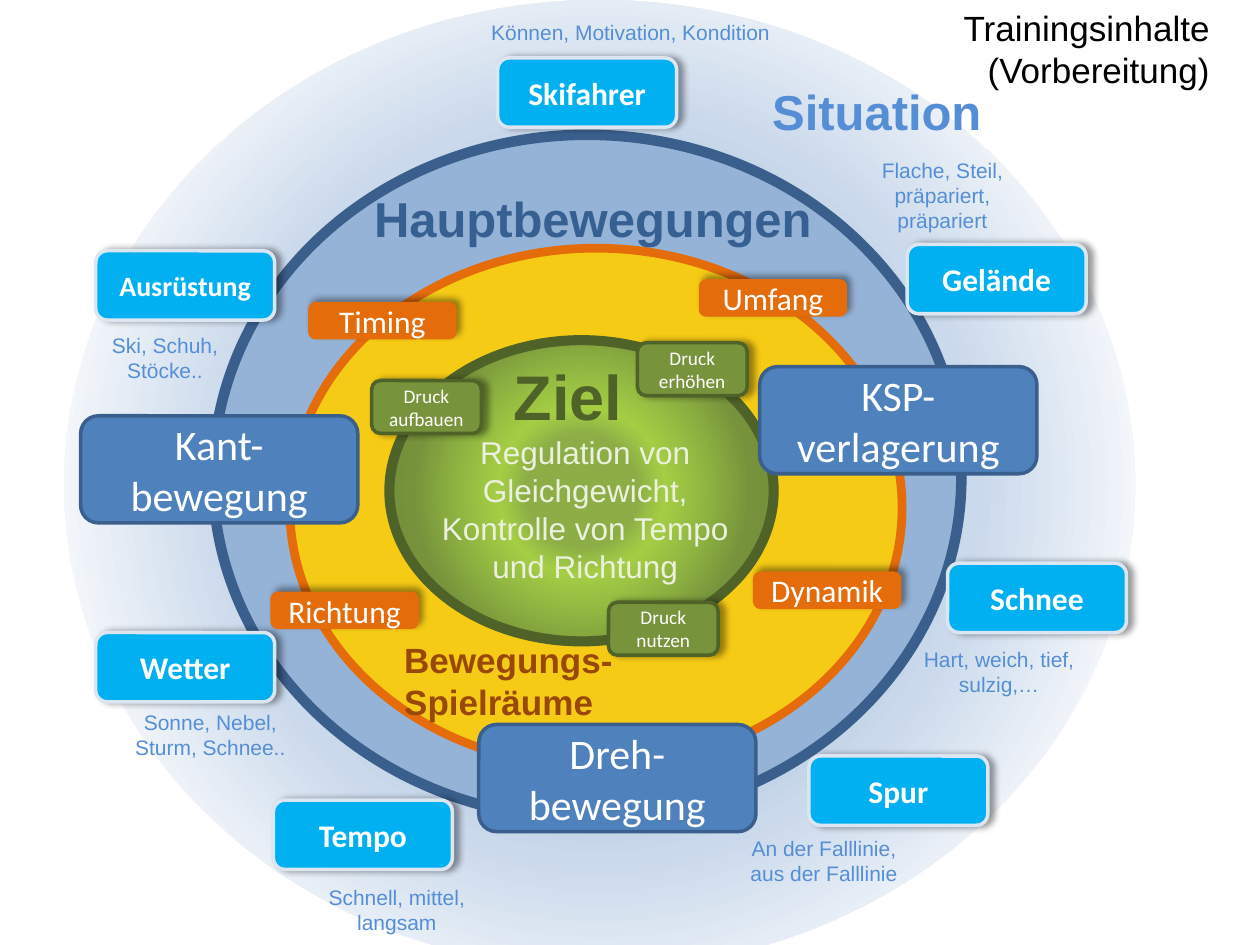
from lxml import etree
from pptx import Presentation
from pptx.dml.color import RGBColor
from pptx.enum.shapes import MSO_SHAPE
from pptx.enum.text import MSO_ANCHOR, MSO_AUTO_SIZE, PP_ALIGN
from pptx.oxml.ns import qn
from pptx.util import Inches, Pt

ELLIPSE = MSO_SHAPE.OVAL
ROUNDED = MSO_SHAPE.ROUNDED_RECTANGLE
LEFT, CENTER, RIGHT = PP_ALIGN.LEFT, PP_ALIGN.CENTER, PP_ALIGN.RIGHT
MIDDLE = MSO_ANCHOR.MIDDLE
GROW = MSO_AUTO_SIZE.SHAPE_TO_FIT_TEXT

WHITE = "FFFFFF"
SKY = "558ED5"
NAVY = "3A5F8C"
ORANGE = "E46C0A"
OLIVE = "4F6228"


def rgb(hex_color):
    return RGBColor.from_string(hex_color)


def child(parent, tag, **attributes):
    """Append a DrawingML element with the given attributes."""
    element = etree.SubElement(parent, qn(tag))
    for name, value in attributes.items():
        element.set(name, str(value))
    return element


class Diagram:
    """The current slide and the style of its elements."""

    def __init__(self, slide):
        self.slide = slide
        self.shapes = slide.shapes

    def start_group(self):
        self.shapes = self.slide.shapes.add_group_shape().shapes

    def end_group(self):
        self.shapes = self.slide.shapes

    def set_lines(self, frame, lines, size, color, font, bold=False, align=CENTER):
        for number, line in enumerate(lines):
            paragraph = frame.paragraphs[0] if number == 0 else frame.add_paragraph()
            paragraph.text = line
            paragraph.alignment = align
            paragraph.font.size = Pt(size)
            paragraph.font.name = font
            paragraph.font.bold = bold
            paragraph.font.color.rgb = rgb(color)

    def shape(self, kind, box, fill, line=None, width=2):
        shape = self.shapes.add_shape(kind, *map(Inches, box))
        shape.shadow.inherit = False
        if isinstance(fill, str):
            shape.fill.solid()
            shape.fill.fore_color.rgb = rgb(fill)
        else:
            self.radial_fill(shape, fill)
        if line:
            shape.line.color.rgb = rgb(line)
            shape.line.width = Pt(width)
        else:
            shape.line.fill.background()
        return shape

    def radial_fill(self, shape, stops):
        """Fill from the centre outwards with (percent, colour, opacity) stops."""
        properties = shape._element.spPr
        gradient = child(properties, "a:gradFill", rotWithShape=1)
        stop_list = child(gradient, "a:gsLst")
        for position, color, opacity in stops:
            stop = child(stop_list, "a:gs", pos=position * 1000)
            tint = child(stop, "a:srgbClr", val=color)
            if opacity < 100:
                child(tint, "a:alpha", val=opacity * 1000)
        circle = child(gradient, "a:path", path="circle")
        child(circle, "a:fillToRect", l=50000, t=50000, r=50000, b=50000)
        properties.find(qn("a:prstGeom")).addnext(gradient)

    def cast_shadow(self, shape, angle):
        effects = shape._element.spPr.find(qn("a:effectLst"))
        shadow = child(effects, "a:outerShdw", blurRad=Pt(4), dist=Pt(3),
                       dir=angle * 60000, algn="l", rotWithShape=0)
        child(child(shadow, "a:srgbClr", val="000000"), "a:alpha", val=40000)

    def label(self, box, lines, fill, line, size, bold=False, shadow_angle=None):
        """A rounded rectangle with centred white text."""
        shape = self.shape(ROUNDED, box, fill, line)
        if shadow_angle is not None:
            self.cast_shadow(shape, shadow_angle)
        shape.text_frame.word_wrap = True
        shape.text_frame.vertical_anchor = MIDDLE
        self.set_lines(shape.text_frame, lines, size, WHITE, "Calibri", bold)

    def text(self, box, lines, size, color, bold=False, align=LEFT, wrap=False):
        frame = self.shapes.add_textbox(*map(Inches, box)).text_frame
        frame.word_wrap = wrap
        frame.auto_size = GROW
        self.set_lines(frame, lines, size, color, "Arial", bold, align)


FACTORS = [
    (3.95, 0.46, "Skifahrer", 18),
    (7.2, 1.94, "Gelände", 18),
    (7.52, 4.47, "Schnee", 18),
    (6.42, 6, "Spur", 18),
    (2.17, 6.35, "Tempo", 18),
    (0.76, 5.02, "Wetter", 18),
    (0.76, 1.99, "Ausrüstung", 16),
]
FACTOR_NOTES = [
    (6.73, 1.2, 0.71, ["Flache, Steil, präpariert,", "präpariert"]),
    (7.18, 5.08, 0.5, ["Hart, weich, tief, sulzig,…"]),
    (5.79, 6.58, 0.5, ["An der Falllinie,", "aus der Falllinie"]),
    (2.4, 6.97, 0.5, ["Schnell, mittel, langsam"]),
    (0.92, 5.58, 0.5, ["Sonne, Nebel, Sturm, Schnee.."]),
    (0.56, 2.59, 0.5, ["Ski, Schuh, Stöcke.."]),
]
MOVEMENTS = [
    (6.03, 2.91, ["KSP-", "verlagerung"]),
    (3.8, 5.75, ["Dreh- bewegung"]),
    (0.64, 3.3, ["Kant- bewegung"]),
]
MARGINS = [
    (2.46, 2.41, "Timing"),
    (2.16, 4.71, "Richtung"),
    (5.56, 2.23, "Umfang"),
    (5.99, 4.55, "Dynamik"),
]
PRESSURES = [
    (2.95, 3.02, "Druck aufbauen"),
    (5.06, 2.72, "Druck erhöhen"),
    (4.83, 4.78, "Druck nutzen"),
]
SITUATION_GLOW = [(16, "B0C6E1", 100), (36, "B0C6E1", 100),
                  (52, "CAD9EB", 100), (81, WHITE, 100)]
GOAL_GLOW = [(23, "8DAE47", 100), (34, "92D050", 80),
             (69, "77933C", 100), (97, "6F8938", 100)]


def main():
    presentation = Presentation()
    presentation.slide_width = Inches(10)
    presentation.slide_height = Inches(7.5)
    diagram = Diagram(presentation.slides.add_slide(presentation.slide_layouts[6]))

    diagram.shape(ELLIPSE, (0.51, 0, 8.5, 7.69), SITUATION_GLOW)
    diagram.shape(ELLIPSE, (1.69, 1.07, 5.94, 5.43), "95B3D7", NAVY, 6)

    diagram.start_group()
    for left, top, factor, size in FACTORS:
        diagram.label((left, top, 1.42, 0.55), [factor], "00B0F0", "DCE6F2",
                      size, bold=True, shadow_angle=0)
    diagram.start_group()
    diagram.text((3.8, 0.11, 2.43, 0.3), ["Können, Motivation, Kondition"], 12, SKY)
    for left, top, height, lines in FACTOR_NOTES:
        diagram.text((left, top, 1.5, height), lines, 12, SKY, align=CENTER, wrap=True)
    diagram.end_group()
    diagram.text((6.03, 0.6, 1.88, 0.57), ["Situation"], 28, SKY, bold=True)

    diagram.shape(ELLIPSE, (2.3, 1.97, 4.86, 4.12), "F6CB16", ORANGE, 5)
    diagram.shape(ELLIPSE, (3.09, 2.7, 3.05, 2.39), GOAL_GLOW, OLIVE, 5.75)

    diagram.start_group()
    for left, top, lines in MOVEMENTS:
        diagram.label((left, top, 2.2, 0.85), lines, "4F81BD", NAVY, 24)
    diagram.end_group()
    diagram.text((2.87, 1.45, 3.72, 0.57), ["Hauptbewegungen"], 28, "376092", bold=True)

    diagram.text((3.11, 5.02, 1.87, 0.77), ["Bewegungs-", "Spielräume"], 20, "984807",
                 bold=True)
    for left, top, margin in MARGINS:
        diagram.label((left, top, 1.15, 0.27), [margin], ORANGE, ORANGE, 18,
                      shadow_angle=315)

    diagram.text((3.98, 2.79, 1.07, 0.71), ["Ziel"], 36, OLIVE, bold=True)
    diagram.text((3.36, 3.39, 2.57, 1.31),
                 ["Regulation von", "Gleichgewicht,", "Kontrolle von Tempo", "und Richtung"],
                 18, "EBF1DE", align=CENTER)
    for left, top, pressure in PRESSURES:
        diagram.label((left, top, 0.87, 0.42), [pressure], "77933C", OLIVE, 11,
                      shadow_angle=0)

    diagram.text((7.35, 0, 2.35, 1.11), ["Trainingsinhalte (Vorbereitung)"], 20, "000000",
                 align=RIGHT, wrap=True)
    presentation.save("out.pptx")


if __name__ == "__main__":
    main()
